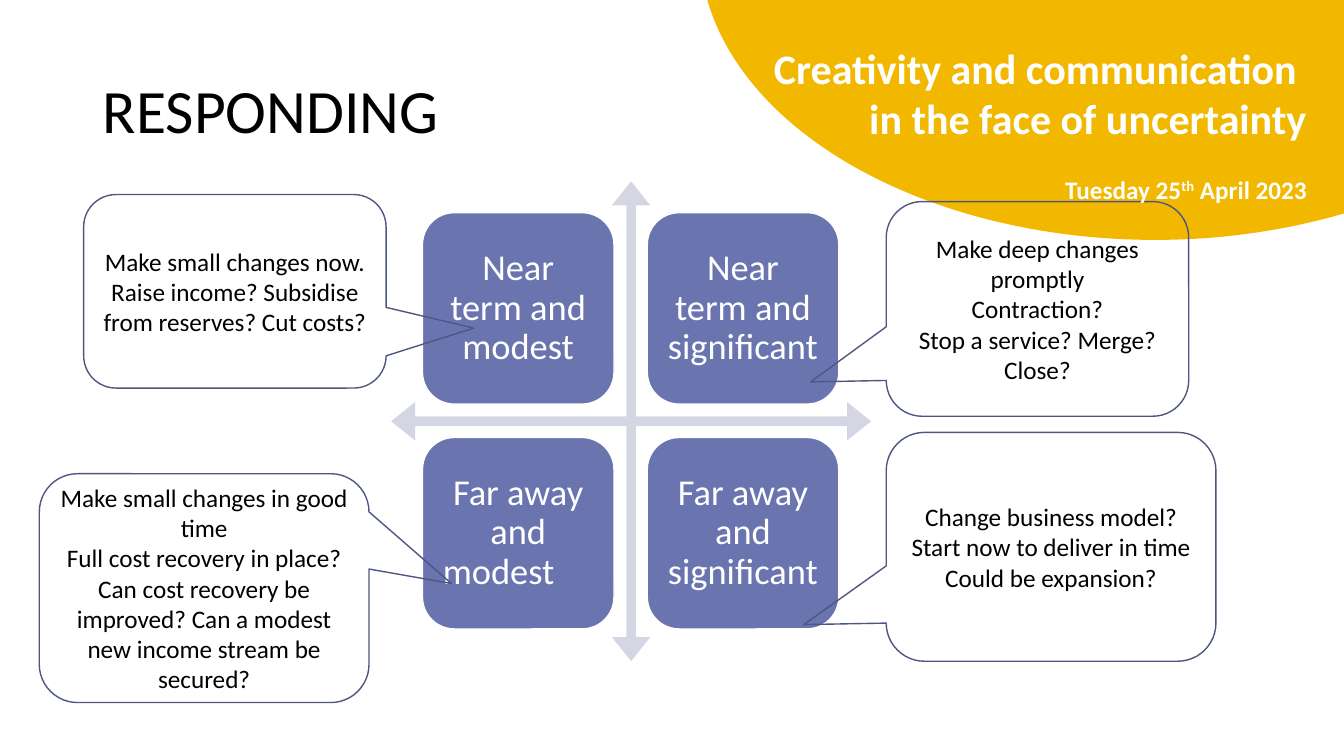
from pptx import Presentation
from pptx.dml.color import RGBColor
from pptx.enum import shapes, text
from pptx.util import Inches, Pt

COLORS = {
    "sun": "F2B800", "arrow": "D4D6E4", "tile": "6A75B0",
    "outline": "4E5782", "white": "FFFFFF", "black": "000000",
}
FONT = "Calibri"
ALIGN = text.PP_ALIGN
SHAPE = shapes.MSO_SHAPE

# Tile grid: left edge, top edge, step and side
TILE_LEFT, TILE_TOP, TILE_STEP, TILE_SIDE = 4.19, 2.11, 2.23, 1.9
TILES = [
    ["Near term and modest", "Near term and significant"],
    ["Far away and modest\t", "Far away and significant"],
]

# Callouts: box, pointer offset, paragraphs
CALLOUTS = [
    ((8.79, 2, 3, 2.13), (-0.75, 0.34),
     ["Make deep changes promptly", "Contraction?",
      "Stop a service? Merge? Close?"]),
    ((0.39, 4.7, 3.27, 2.27), (0.75, -0.02),
     ["Make small changes in good time",
      "Full cost recovery in place? Can cost recovery be improved? "
      "Can a modest new income stream be secured?"]),
    ((0.83, 1.93, 3, 1.92), (0.79, 0.19),
     ["Make small changes now.",
      "Raise income? Subsidise from reserves? Cut costs?"]),
    ((8.79, 4.29, 3.27, 2.27), (-0.75, 0.34),
     ["Change business model?", "Start now to deliver in time",
      "Could be expansion?"]),
]


def rgb(name):
    return RGBColor.from_string(COLORS[name])


def set_all(target, **values):
    for name, value in values.items():
        setattr(target, name, value)


def add_shape(s, kind, box, fill=None, line=None, adjustments=()):
    sp = s.shapes.add_shape(kind, *map(Inches, box))
    sp.shadow.inherit = False
    for i, value in enumerate(adjustments):
        sp.adjustments[i] = value
    if fill:
        sp.fill.solid()
        sp.fill.fore_color.rgb = rgb(fill)
    else:
        sp.fill.background()
    if line:
        sp.line.color.rgb = rgb(line)
        sp.line.width = Pt(1)
    else:
        sp.line.fill.background()
    return sp


def add_run(p, words, size, color, bold=False):
    r = p.add_run()
    r.text = words
    set_all(r.font, name=FONT, size=Pt(size), bold=bold)
    r.font.color.rgb = rgb(color)
    return r


def write(tf, paragraphs, size, color, **layout):
    set_all(tf, word_wrap=True, vertical_anchor=text.MSO_ANCHOR.MIDDLE)
    for i, words in enumerate(paragraphs):
        p = tf.add_paragraph() if i else tf.paragraphs[0]
        set_all(p, **layout)
        add_run(p, words, size, color)


def add_title(s):
    sp = s.shapes.title
    set_all(sp, left=Inches(0.92), top=Inches(0.4),
            width=Inches(11.5), height=Inches(1.45))
    write(sp.text_frame, ["RESPONDING"], 44, "black",
          alignment=ALIGN.LEFT, line_spacing=0.9)


def add_tile(s, row, col, words):
    box = (TILE_LEFT + col * TILE_STEP, TILE_TOP + row * TILE_STEP,
           TILE_SIDE, TILE_SIDE)
    sp = add_shape(s, SHAPE.ROUNDED_RECTANGLE, box, "tile", "white")
    inset = Inches(0.11)
    set_all(sp.text_frame, margin_left=inset, margin_right=inset,
            margin_top=inset, margin_bottom=inset)
    write(sp.text_frame, [words], 26, "white",
          alignment=ALIGN.CENTER, line_spacing=0.9)


def add_callout(s, box, pointer, paragraphs):
    sp = add_shape(s, SHAPE.ROUNDED_RECTANGULAR_CALLOUT, box,
                   line="outline", adjustments=(*pointer, 0.167))
    write(sp.text_frame, paragraphs, 18, "black", alignment=ALIGN.CENTER)


def add_event(s):
    box = s.shapes.add_textbox(*map(Inches, (7.18, 0.37, 5.88, 1.72)))
    tf = box.text_frame
    tf.word_wrap = True
    p = tf.paragraphs[0]
    p.alignment = ALIGN.RIGHT
    add_run(p, "Creativity and communication ", 30, "white", True)
    p.add_line_break()
    add_run(p, "in the face of uncertainty", 30, "white", True)

    p = tf.add_paragraph()
    set_all(p, alignment=ALIGN.RIGHT, space_before=Pt(22))
    add_run(p, "Tuesday 25", 18, "white", True)
    r = add_run(p, "th", 18, "white", True)
    r.font._element.set("baseline", "30000")
    add_run(p, " April 2023", 18, "white", True)


def main():
    prs = Presentation()
    set_all(prs, slide_width=Inches(13.33), slide_height=Inches(7.5))
    s = prs.slides.add_slide(prs.slide_layouts[5])

    # Heading and corner ellipse
    add_title(s)
    add_shape(s, SHAPE.OVAL, (6.94, -3.44, 9.03, 5.82), "sun")

    # Matrix
    add_shape(s, SHAPE.QUAD_ARROW, (3.88, 1.8, 4.76, 4.76), "arrow",
              adjustments=(0.02, 0.04, 0.05))
    for row, labels in enumerate(TILES):
        for col, words in enumerate(labels):
            add_tile(s, row, col, words)

    # Responses
    for callout in CALLOUTS:
        add_callout(s, *callout)

    # Event name and date
    add_event(s)
    prs.save("out.pptx")


if __name__ == "__main__":
    main()
